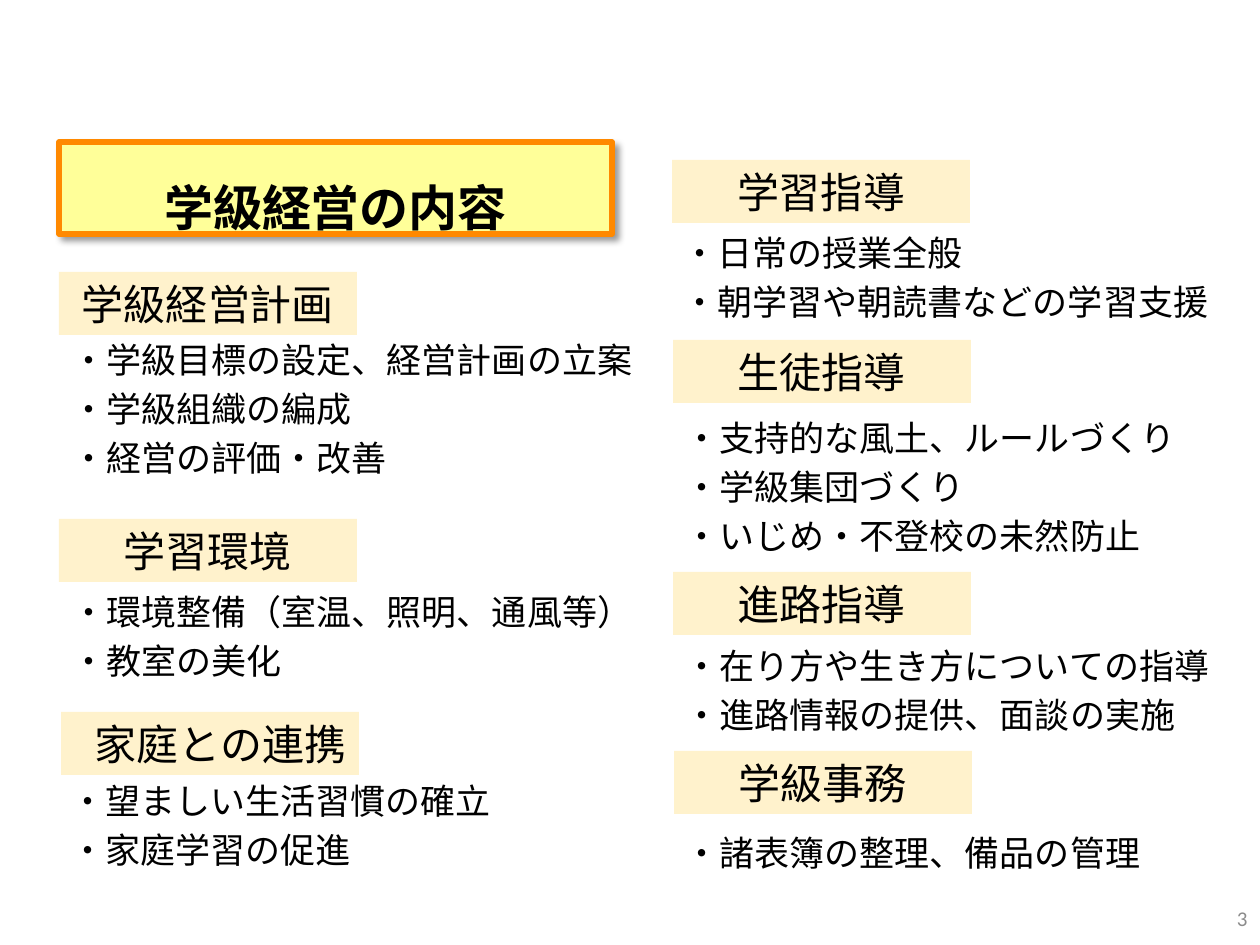
from lxml.etree import SubElement as Sub
from pptx import Presentation as Deck
from pptx.dml.color import RGBColor as Rgb
from pptx.enum.shapes import MSO_SHAPE as Geo
from pptx.enum.text import MSO_ANCHOR as Anchor, MSO_AUTO_SIZE as Auto, PP_ALIGN as Align
from pptx.oxml.ns import qn
from pptx.util import Emu, Pt

SCALE = 914400 / 126
FONT = "Noto Sans CJK JP"


def px(num):
    return Emu(round(num * SCALE))


def color(text):
    return Rgb.from_string(text)


def apply(item, vals):
    for key, val in vals.items():
        setattr(item, key, val)


class Page:
    ink, label, gold, edge, gray = "000000", "FFF2CC", "FFFF99", "FF8900", "8C8C8C"
    frame = {"word_wrap": True, "auto_size": Auto.NONE, "vertical_anchor": Anchor.TOP}

    def __init__(self, deck):
        self.slide = deck.slides.add_slide(deck.slide_layouts[5])

    def label_text(self, shape, lines, size, face=FONT, ink=ink, bold=False, frame={}, para={}):
        body = shape.text_frame
        apply(body, {**self.frame, **frame})
        for num, line in enumerate(lines):
            part = body.add_paragraph() if num else body.paragraphs[0]
            apply(part, para)
            run = part.add_run()
            run.text = line
            apply(run.font, {"name": face, "size": Pt(size), "bold": bold})
            run.font.color.rgb = color(ink)
            Sub(run.font._element, qn("a:ea"), typeface=face)
        return body.paragraphs

    def paint(self, shape, fill):
        shape.fill.solid()
        shape.fill.fore_color.rgb = color(fill)

    def title(self, text, *box):
        shape = self.slide.shapes.title
        apply(shape, dict(zip(("left", "top", "width", "height"), map(px, box))))
        self.paint(shape, self.gold)
        shape.line.color.rgb = color(self.edge)
        shape.line.width = Pt(3)
        effect = Sub(shape._element.spPr, qn("a:effectLst"))
        shade = Sub(effect, qn("a:outerShdw"), blurRad=str(Pt(4)), dist=str(Pt(3)),
                    dir="2700000", algn="tl", rotWithShape="0")
        tint = Sub(shade, qn("a:srgbClr"), val=self.ink)
        Sub(tint, qn("a:alpha"), val="40000")
        pad = {"margin_left": px(13), "margin_right": px(13),
               "margin_top": px(10), "margin_bottom": px(10)}
        self.label_text(shape, [text], 28, bold=True, frame=pad,
                        para={"alignment": Align.CENTER, "line_spacing": Pt(48)})

    def head(self, text, left, top, align=Align.CENTER):
        shape = self.slide.shapes.add_shape(
            Geo.RECTANGLE, *map(px, (left, top, 298, 63)))
        shape.shadow.inherit = False
        self.paint(shape, self.label)
        shape.line.fill.background()
        self.label_text(shape, [text], 24, frame={"vertical_anchor": Anchor.MIDDLE},
                        para={"alignment": align})

    def items(self, lines, left, top, width, lead=28):
        high = round(lead * 1.75) * len(lines) + 13
        shape = self.slide.shapes.add_textbox(*map(px, (left, top, width, high)))
        texts = ["・" + line for line in lines]
        for part in self.label_text(shape, texts, 20, para={"line_spacing": Pt(lead)}):
            props = part._p.get_or_add_pPr()
            props.set("marL", str(px(49)))
            props.set("indent", str(-px(49)))

    def number(self, text, *box):
        shape = self.slide.shapes.add_textbox(*map(px, box))
        self.label_text(shape, [text], 12, "Calibri", self.gray,
                        frame={"vertical_anchor": Anchor.MIDDLE},
                        para={"alignment": Align.RIGHT})


GROUPS = [
    ("学級経営計画", 59, 272, Align.CENTER, 59, 325, 28,
     ["学級目標の設定、経営計画の立案", "学級組織の編成", "経営の評価・改善"]),
    ("学習環境", 59, 519, Align.CENTER, 59, 577, 28,
     ["環境整備（室温、照明、通風等）", "教室の美化"]),
    ("家庭との連携", 61, 712, Align.RIGHT, 58, 766, 28,
     ["望ましい生活習慣の確立", "家庭学習の促進"]),
    ("学習指導", 672, 160, Align.CENTER, 670, 218, 28,
     ["日常の授業全般", "朝学習や朝読書などの学習支援"]),
    ("生徒指導", 673, 340, Align.CENTER, 672, 403, 28,
     ["支持的な風土、ルールづくり", "学級集団づくり", "いじめ・不登校の未然防止"]),
    ("進路指導", 673, 572, Align.CENTER, 672, 631, 28,
     ["在り方や生き方についての指導", "進路情報の提供、面談の実施"]),
    ("学級事務", 674, 751, Align.CENTER, 672, 804, 36,
     ["諸表簿の整理、備品の管理"]),
]


def main():
    deck = Deck()
    apply(deck, {"slide_width": px(1260), "slide_height": px(945)})
    page = Page(deck)
    page.title("学級経営の内容", 59, 142, 553, 92)
    for name, left, top, align, start, drop, lead, lines in GROUPS:
        page.head(name, left, top, align)
        page.items(lines, start, drop, 593 if left < 630 else 571, lead)
    page.number("3", 976, 893, 284, 50)
    deck.save("out.pptx")


if __name__ == "__main__":
    main()
